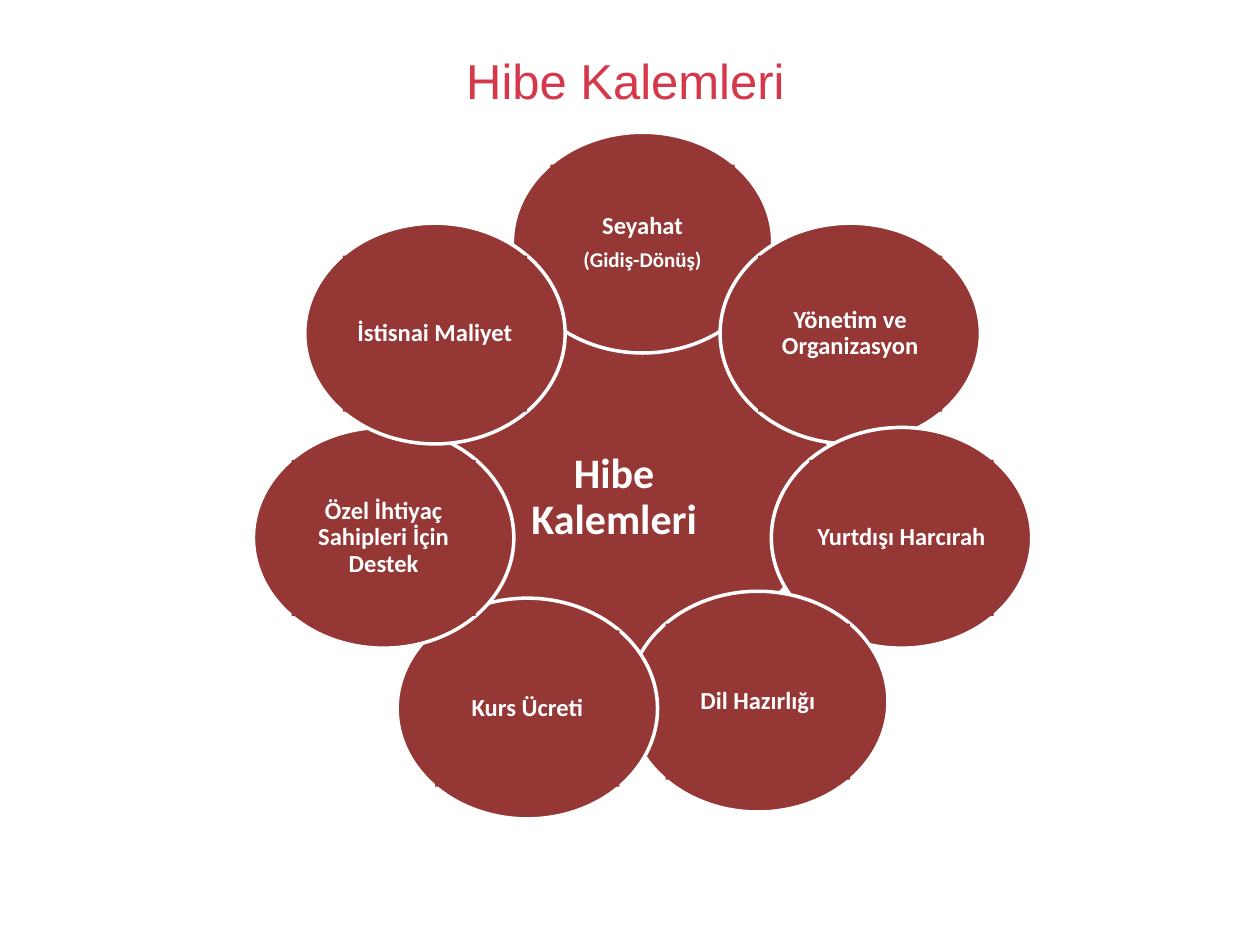
from math import cos, pi, sin, sqrt
from pptx import Presentation
from pptx.dml.color import RGBColor
from pptx.enum.shapes import MSO_SHAPE
from pptx.enum.text import MSO_ANCHOR, PP_ALIGN
from pptx.util import Inches, Pt

CRIMSON = RGBColor(0xD5, 0x38, 0x4B)
BRICK = RGBColor(0x95, 0x37, 0x35)
WHITE = RGBColor(0xFF, 0xFF, 0xFF)

PETALS = [
    [("Seyahat", 14), ("(Gidiş-Dönüş)", 12)],
    [("Yönetim ve Organizasyon", 14)],
    [("Yurtdışı Harcırah", 14)],
    [("Dil Hazırlığı", 14)],
    [("Kurs Ücreti", 14)],
    [("Özel İhtiyaç Sahipleri İçin Destek", 14)],
    [("İstisnai Maliyet", 14)],
]
NUDGED_PETAL = 4


def add_centred(group, kind, cx, cy, w, h):
    sp = group.shapes.add_shape(kind, int(cx - w / 2), int(cy - h / 2), int(w), int(h))
    sp.shadow.inherit = False
    sp.fill.solid()
    sp.fill.fore_color.rgb = BRICK
    return sp


def add_disc(group, cx, cy, w, h):
    sp = add_centred(group, MSO_SHAPE.OVAL, cx, cy, w, h)
    sp.line.color.rgb = WHITE
    sp.line.width = Pt(2)


def add_label(group, cx, cy, w, h, lines, inset):
    sp = add_centred(group, MSO_SHAPE.RECTANGLE, cx, cy, w, h)
    sp.line.fill.background()
    tf = sp.text_frame
    tf.word_wrap = True
    tf.vertical_anchor = MSO_ANCHOR.MIDDLE
    tf.margin_left = tf.margin_right = tf.margin_top = tf.margin_bottom = Inches(inset)
    for i, (text, size) in enumerate(lines):
        p = tf.paragraphs[0] if i == 0 else tf.add_paragraph()
        p.alignment = PP_ALIGN.CENTER
        p.line_spacing = 0.9
        p.space_after = Pt(round(size * 0.35))
        r = p.add_run()
        r.text = text
        r.font.name = "Calibri"
        r.font.size = Pt(size)
        r.font.bold = True
        r.font.color.rgb = WHITE
    return tf


def add_title(s, x, y, w, h):
    sp = s.shapes.title
    sp.left, sp.top, sp.width, sp.height = int(x), int(y), int(w), int(h)
    tf = sp.text_frame
    tf.vertical_anchor = MSO_ANCHOR.MIDDLE
    p = tf.paragraphs[0]
    p.alignment = PP_ALIGN.LEFT
    r = p.add_run()
    r.text = "Hibe Kalemleri"
    r.font.name = "Arial"
    r.font.size = Pt(28)
    r.font.color.rgb = CRIMSON


def add_flower(s, x, y, w, h):
    group = s.shapes.add_group_shape()
    add_disc(group, x + 0.48 * w, y + 0.49 * h, 0.52 * w, 0.54 * h)

    petal_w, petal_h = w / 3, 0.32 * h
    for i, lines in enumerate(PETALS):
        angle = 2 * pi * i / len(PETALS)
        cx = x + w / 2 + 0.34 * w * sin(angle)
        cy = y + 0.51 * h - 0.35 * h * cos(angle)
        if i == NUDGED_PETAL:
            cy += 0.01 * h
        add_disc(group, cx, cy, petal_w, petal_h)
        add_label(group, cx, cy, petal_w / sqrt(2), petal_h / sqrt(2), lines, 0.02)

    tf = add_label(group, x + w / 2, y + 0.53 * h, 0.3 * w, 0.24 * h,
                   [("Hibe", 24), ("Kalemleri", 24)], 0.04)
    first = tf.paragraphs[0]
    first.space_after = Pt(0)
    first._p.get_or_add_pPr().set("marR", str(Inches(0.45)))


def main():
    prs = Presentation()
    prs.slide_width, prs.slide_height = Inches(10), Inches(7.5)
    W, H = prs.slide_width, prs.slide_height
    s = prs.slides.add_slide(prs.slide_layouts[5])
    add_title(s, 0.36 * W, 0.04 * H, 0.64 * W, 0.09 * H)
    add_flower(s, 0.2 * W, 0.14 * H, 0.62 * W, 0.73 * H)
    prs.save("out.pptx")


if __name__ == "__main__":
    main()
